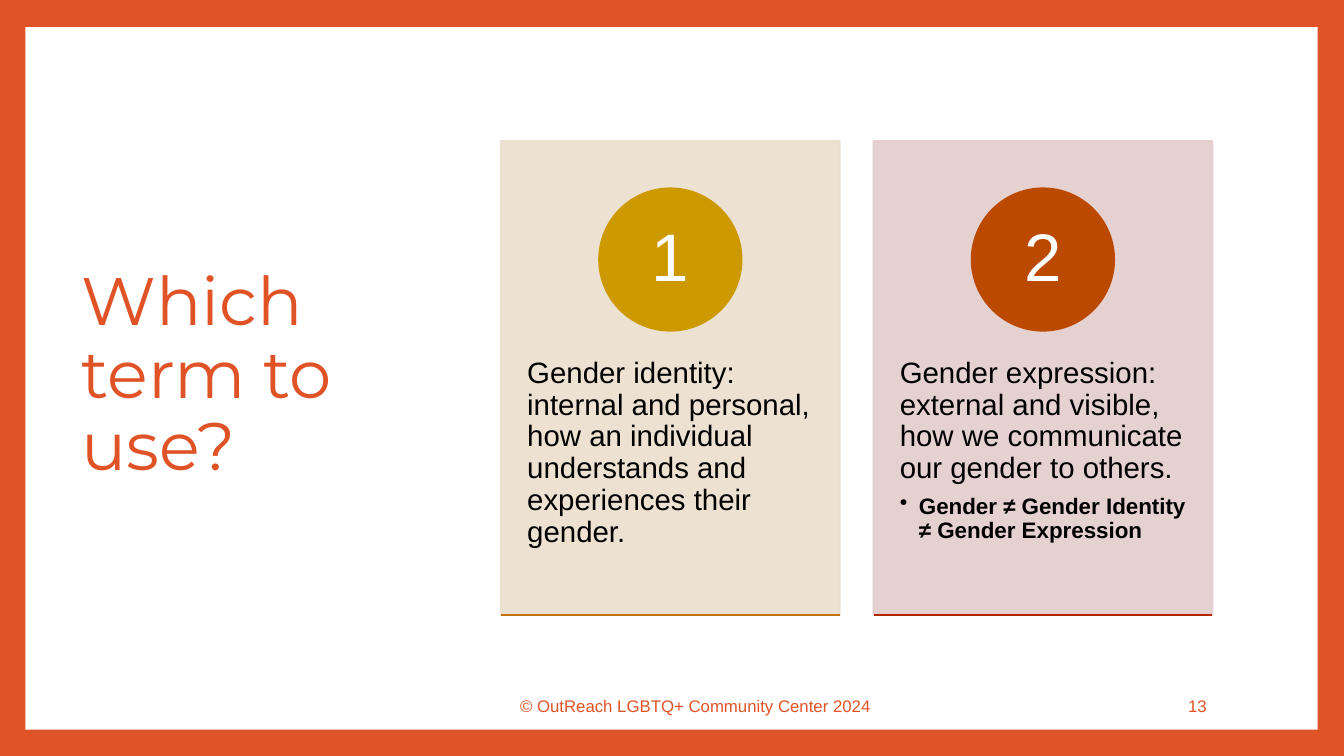
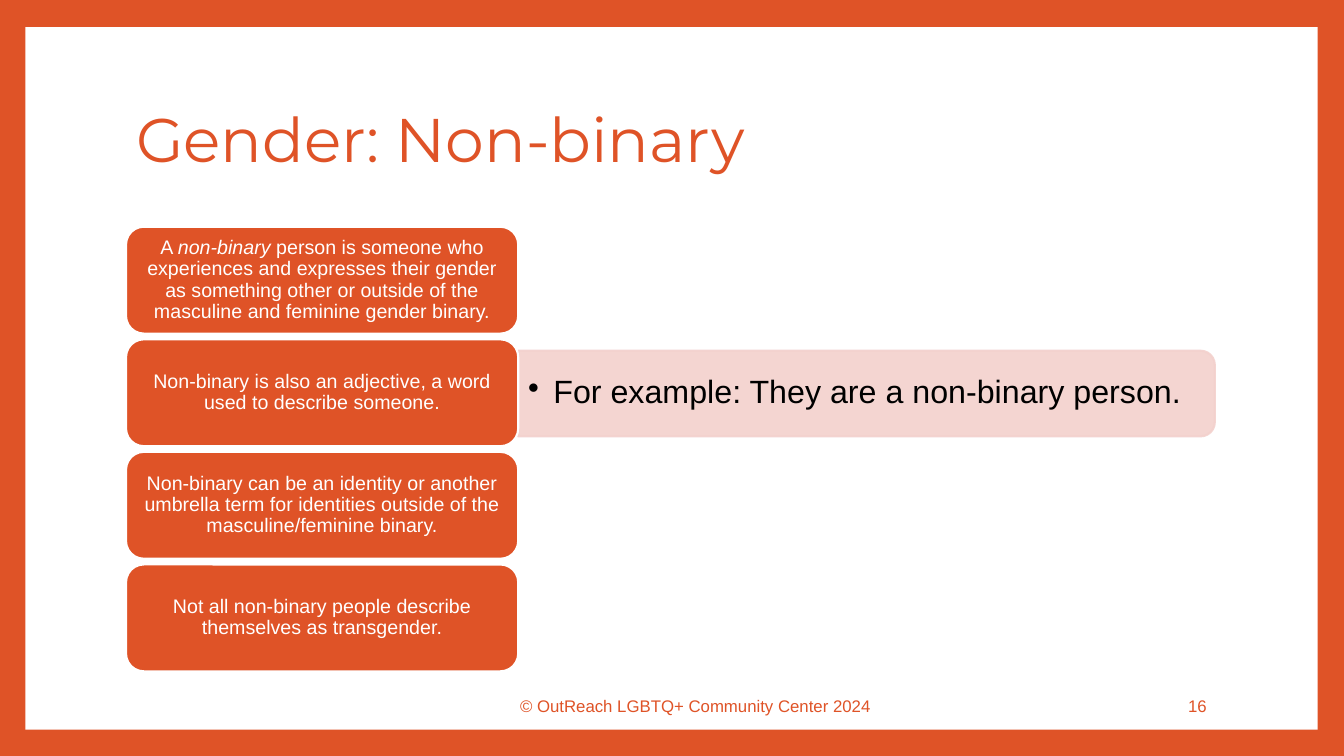
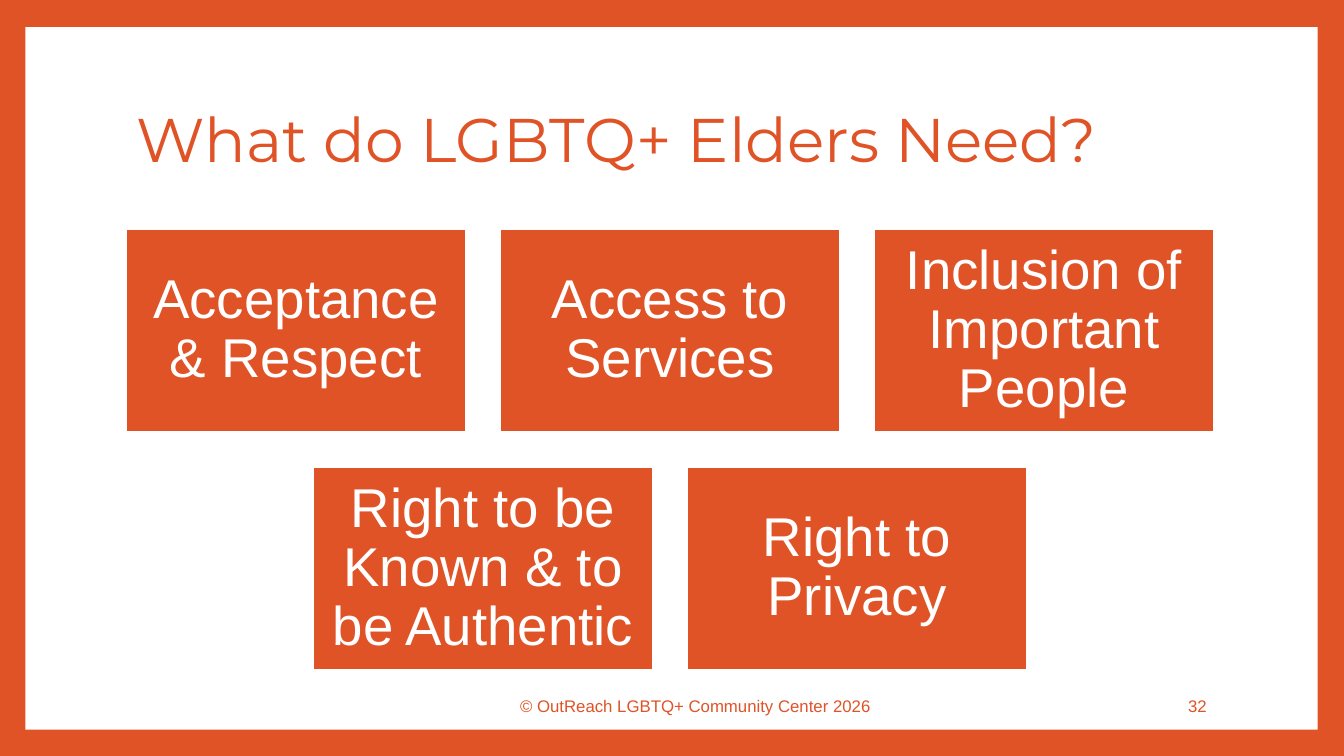
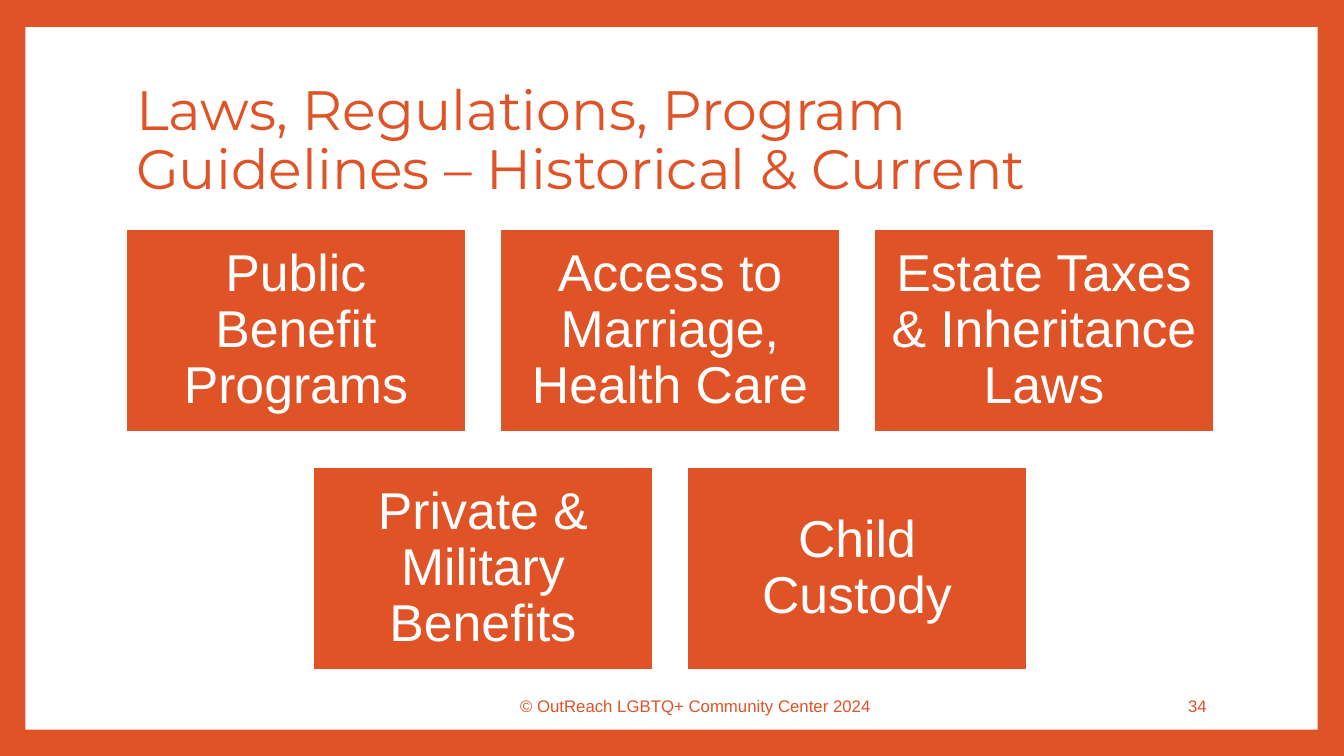
"""Build four slides on gender terms and the needs of LGBTQ+ elders."""
from lxml import etree
from pptx import Presentation
from pptx import util as u
from pptx.dml.color import RGBColor
from pptx.enum import shapes, text
from pptx.oxml.ns import qn

ORANGE = RGBColor(0xDF, 0x53, 0x27)
WHITE = RGBColor(0xFF, 0xFF, 0xFF)
BLACK = RGBColor(0x00, 0x00, 0x00)
PINK = RGBColor(0xF3, 0xD1, 0xCD)
SAND = RGBColor(0xEC, 0xDE, 0xCC)
ROSE = RGBColor(0xE4, 0xCD, 0xCC)
GOLD = RGBColor(0xCC, 0x99, 0x00)
RUST = RGBColor(0xBB, 0x49, 0x00)
AMBER = RGBColor(0xC3, 0x70, 0x00)
BRICK = RGBColor(0xB2, 0x26, 0x00)
KIND = shapes.MSO_SHAPE
LEFT, CENTER, RIGHT = text.PP_ALIGN.LEFT, text.PP_ALIGN.CENTER, text.PP_ALIGN.RIGHT

deck = Presentation()
deck.slide_width, deck.slide_height = u.Inches(13.33), u.Inches(7.5)
COLUMN, ROW = deck.slide_width / 100, deck.slide_height / 100


def add_box(page, kind, left, top, width, height, fill=None, line=None, alpha=None):
    """Add a shape, or a text box if kind is None, placed in percent of the slide."""
    place = [int(n) for n in (left * COLUMN, top * ROW, width * COLUMN, height * ROW)]
    if kind is None:
        return page.shapes.add_textbox(*place)
    box = page.shapes.add_shape(kind, *place)
    box.shadow.inherit = False
    box.fill.solid()
    box.fill.fore_color.rgb = fill
    if line is None:
        box.line.fill.background()
    else:
        box.line.color.rgb = line
        box.line.width = u.Pt(1.5)
    if alpha:
        for color in box.element.spPr.iter(qn("a:srgbClr")):
            etree.SubElement(color, qn("a:alpha"), val=str(alpha * 1000))
    return box


def write(frame, para, words, size, color, align=CENTER, inset=(0.1, 0.05),
          face="Arial", bullet=None):
    """Fill a paragraph; every second string in words is italic."""
    frame.word_wrap = True
    frame.auto_size = text.MSO_AUTO_SIZE.NONE
    frame.vertical_anchor = text.MSO_ANCHOR.MIDDLE
    frame.margin_left = frame.margin_right = u.Inches(inset[0])
    frame.margin_top = frame.margin_bottom = u.Inches(inset[1])
    if bullet:
        props = para._p.get_or_add_pPr()
        props.set("marL", str(u.Inches(bullet)))
        props.set("indent", str(-u.Inches(bullet)))
        etree.SubElement(props, qn("a:buChar"), char="•")
    para.alignment = align
    para.line_spacing = 0.9
    para.font.name, para.font.size, para.font.color.rgb = face, u.Pt(size), color
    for index, part in enumerate(words):
        span = para.add_run()
        span.text = part
        if index % 2:
            span.font.italic = True


master = deck.slide_master
master.background.fill.solid()
master.background.fill.fore_color.rgb = ORANGE

TITLE_BAND = (9.38, 8.93, 81, 19.73)
TITLE_SIDE = (5.33, 8.93, 27.6, 81.73)
headings = [
    ("Which term to use?", 48, TITLE_SIDE, 2024, 13),
    ("Gender: Non-binary", 44, TITLE_BAND, 2024, 16),
    ("What do LGBTQ+ Elders Need?", 44, TITLE_BAND, 2026, 32),
    ("Laws, Regulations, Program Guidelines – Historical & Current", 39.6, TITLE_BAND, 2024, 34),
]
pages = []
for heading, size, (left, top, width, height), year, number in headings:
    page = deck.slides.add_slide(deck.slide_layouts[5])
    title = page.shapes.title
    title.left, title.width = int(left * COLUMN), int(width * COLUMN)
    title.top, title.height = int(top * ROW), int(height * ROW)
    write(title.text_frame, title.text_frame.paragraphs[0], [heading], size, ORANGE,
          LEFT, face="Montserrat")
    footer = f"© OutReach LGBTQ+ Community Center {year}"
    for label, left, width, align in ((footer, 32.4, 38.7, CENTER), (str(number), 76.5, 14.03, RIGHT)):
        frame = add_box(page, None, left, 90.8, width, 5.33).text_frame
        write(frame, frame.paragraphs[0], [label], 12, ORANGE, align)
    pages.append(page)

terms_page, nonbinary_page, needs_page, laws_page = pages

panel = add_box(terms_page, KIND.RECTANGLE, 1.88, 3.6, 96.15, 92.93, WHITE)
panel.element.nvSpPr.cNvPr.set("id", "99")
master.shapes.element.insert(2, panel.element)

CARD_LEFT, CARD_STEP, CARD_WIDTH = 37.28, 27.72, 25.2
CARD_TOP, CARD_HEIGHT, DISC_WIDTH, DISC_HEIGHT = 18.67, 62.67, 10.58, 18.8
cards = [
    (SAND, GOLD, AMBER,
     "Gender identity: internal and personal, how an individual understands and experiences their gender.",
     None),
    (ROSE, RUST, BRICK,
     "Gender expression: external and visible, how we communicate our gender to others.",
     "Gender ≠ Gender Identity ≠ Gender Expression"),
]
for index, (tint, disc_color, bar_color, meaning, remark) in enumerate(cards):
    left = CARD_LEFT + index * CARD_STEP
    card = add_box(terms_page, KIND.RECTANGLE, left, CARD_TOP, CARD_WIDTH, CARD_HEIGHT,
                   tint, tint, 90)
    frame = card.text_frame
    write(frame, frame.paragraphs[0], [meaning], 21, BLACK, LEFT, (0.26, 0.36))
    if remark:
        frame.paragraphs[0].space_after = u.Pt(7)
        para = frame.add_paragraph()
        write(frame, para, [remark], 16, BLACK, LEFT, (0.26, 0.36), bullet=0.19)
        para.font.bold = True
    frame.vertical_anchor = text.MSO_ANCHOR.TOP
    frame.margin_top = u.Inches(2.15)
    disc = add_box(terms_page, KIND.OVAL, left + (CARD_WIDTH - DISC_WIDTH) / 2, 24.93,
                   DISC_WIDTH, DISC_HEIGHT, disc_color, disc_color)
    write(disc.text_frame, disc.text_frame.paragraphs[0], [str(index + 1)], 48, WHITE)
    bar_top = int((CARD_TOP + CARD_HEIGHT) * ROW)
    bar = terms_page.shapes.add_connector(
        shapes.MSO_CONNECTOR.STRAIGHT, int(left * COLUMN), bar_top,
        int((left + CARD_WIDTH) * COLUMN), bar_top)
    bar.line.color.rgb = bar_color
    bar.line.width = u.Pt(2)
    etree.SubElement(bar.element.spPr, qn("a:effectLst"))

example = add_box(nonbinary_page, KIND.ROUND_2_SAME_RECTANGLE, 61.28, 6, 6.38, 92.13,
                  PINK, PINK, 90)
example.rotation = 90
frame = add_box(nonbinary_page, None, 38.56, 46.93, 51.54, 10.27).text_frame
write(frame, frame.paragraphs[0], ["For example: They are a non-binary person."], 23, BLACK,
      LEFT, bullet=0.25)
facts = [
    ("A ", "non-binary", " person is someone who experiences and expresses their gender as "
     "something other or outside of the masculine and feminine gender binary."),
    ("Non-binary is also an adjective, a word used to describe someone.",),
    ("Non-binary can be an identity or another umbrella term for identities outside of the "
     "masculine/feminine binary.",),
    ("Not all non-binary people describe themselves as transgender.",),
]
for index, fact in enumerate(facts):
    box = add_box(nonbinary_page, KIND.ROUNDED_RECTANGLE, 9.38, 30 + index * 14.89, 29.18, 14.13,
                  ORANGE, WHITE)
    write(box.text_frame, box.text_frame.paragraphs[0], fact, 14, WHITE, inset=(0.06, 0.05))

TILE_STEP, TILE_ROW_STEP, TILES_PER_ROW = 27.83, 31.47, 3
tile_sets = [
    (needs_page, 39, 0.16, ["Acceptance & Respect", "Access to Services",
                            "Inclusion of Important People",
                            "Right to be Known & to be Authentic", "Right to Privacy"]),
    (laws_page, 37, 0.15, ["Public Benefit Programs", "Access to Marriage, Health Care",
                           "Estate Taxes & Inheritance Laws",
                           "Private & Military Benefits", "Child Custody"]),
]
for page, size, inset, labels in tile_sets:
    for index, label in enumerate(labels):
        row, column = divmod(index, TILES_PER_ROW)
        left = 9.38 + (column + row / 2) * TILE_STEP
        tile = add_box(page, KIND.RECTANGLE, left, 30.27 + row * TILE_ROW_STEP, 25.28, 26.93,
                       ORANGE, WHITE)
        write(tile.text_frame, tile.text_frame.paragraphs[0], [label], size, WHITE,
              inset=(inset, inset))

deck.save("out.pptx")
